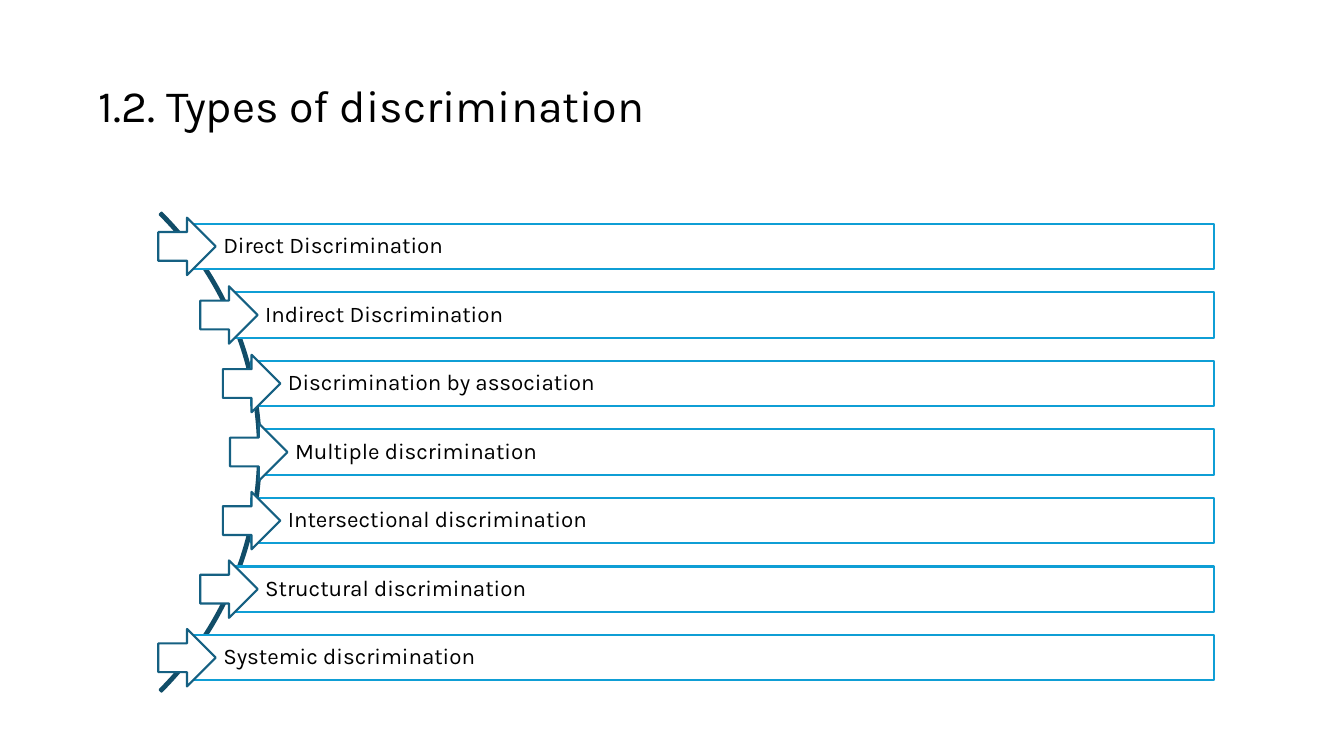
import math
from pptx import Presentation
from pptx import util as u
from pptx.dml.color import RGBColor
from pptx.enum import shapes, text

BLACK = RGBColor(0x00, 0x00, 0x00)
WHITE = RGBColor(0xFF, 0xFF, 0xFF)
NAVY = RGBColor(0x11, 0x4D, 0x68)
TEAL = RGBColor(0x15, 0x60, 0x82)
BLUE = RGBColor(0x0F, 0x9E, 0xD5)

TYPES = [
    "Direct Discrimination",
    "Indirect Discrimination",
    "Discrimination by association",
    "Multiple discrimination",
    "Intersectional discrimination",
    "Structural discrimination",
    "Systemic discrimination",
]
ARROW = 0.57
BAR_HEIGHT = 0.45
CURVE_RADIUS = 3.28
ARC_RADIUS = 3.36


def apply(obj, values):
    for name, value in values.items():
        setattr(obj, name, value)


def inches(*lengths):
    return [u.Inches(length) for length in lengths]


def write(sp, content, size, margins):
    tf = sp.text_frame
    apply(tf, {"word_wrap": True, "auto_size": text.MSO_AUTO_SIZE.NONE,
               "vertical_anchor": text.MSO_ANCHOR.MIDDLE})
    apply(tf, {f"margin_{side}": u.Inches(m) for side, m in margins.items()})
    p = tf.paragraphs[0]
    apply(p, {"alignment": text.PP_ALIGN.LEFT, "line_spacing": 0.9})
    r = p.add_run()
    r.text = content
    apply(r.font, {"name": "Karla", "size": u.Pt(size)})
    r.font.color.rgb = BLACK


def add_outline(slide, kind, box, line, fill=WHITE):
    sp = slide.shapes.add_shape(kind, *inches(*box))
    sp.shadow.inherit = False
    sp.fill.solid()
    sp.fill.fore_color.rgb = fill
    sp.line.color.rgb = line
    sp.line.width = u.Pt(1.5)
    return sp


def add_title(slide, box, content):
    sp = slide.shapes.title
    apply(sp, dict(zip(("left", "top", "width", "height"), inches(*box))))
    write(sp, content, 32, {"left": 0.1, "right": 0.1, "top": 0.05, "bottom": 0.05})


def add_curved_list(slide, box, items):
    left, top, width, height = box
    middle = top + height / 2
    pitch = (height - ARROW) / (len(items) - 1)
    half_span = (height - ARROW) / 2
    pivot = left + ARROW / 2 - math.sqrt(CURVE_RADIUS ** 2 - half_span ** 2)

    arc_box = (pivot - 0.06 - ARC_RADIUS, middle - ARC_RADIUS,
               2 * ARC_RADIUS, 2 * ARC_RADIUS)
    arc = add_outline(slide, shapes.MSO_SHAPE.BLOCK_ARC, arc_box, NAVY, NAVY)
    for i, value in enumerate((189, 27, 0.004)):
        arc.adjustments[i] = value

    for i, item in enumerate(items):
        y = middle - half_span + i * pitch
        x = pivot + math.sqrt(CURVE_RADIUS ** 2 - (y - middle) ** 2)
        bar_box = (x, y - BAR_HEIGHT / 2, left + width - x, BAR_HEIGHT)
        bar = add_outline(slide, shapes.MSO_SHAPE.RECTANGLE, bar_box, BLUE)
        write(bar, item, 16, {"left": 0.36, "right": 0.04, "top": 0.04, "bottom": 0.04})
        arrow_box = (x - ARROW / 2, y - ARROW / 2, ARROW, ARROW)
        add_outline(slide, shapes.MSO_SHAPE.RIGHT_ARROW, arrow_box, TEAL)


def main():
    prs = Presentation()
    prs.slide_width, prs.slide_height = inches(13.33, 7.5)
    slide = prs.slides.add_slide(prs.slide_layouts[5])
    add_title(slide, (0.88, 0.61, 10.5, 0.92), "1.2. Types of discrimination")
    add_curved_list(slide, (1.57, 2.16, 10.47, 4.65), TYPES)
    prs.save("out.pptx")


if __name__ == "__main__":
    main()
